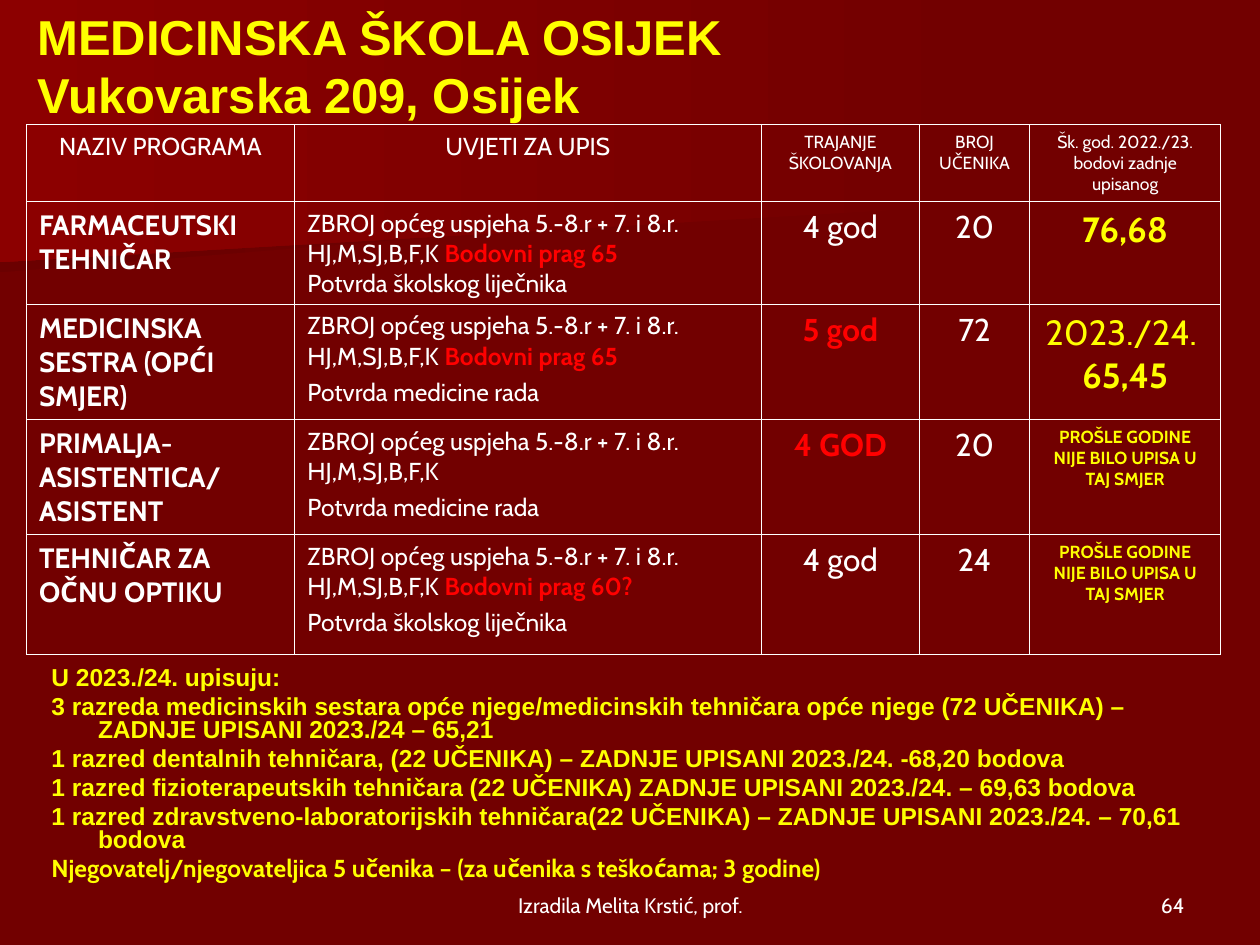
"""Build the enrolment slide of a medical school."""
from dataclasses import dataclass

from lxml.etree import SubElement as Sub
from pptx import Presentation
from pptx.dml.color import RGBColor as Rgb
from pptx.enum.text import MSO_ANCHOR as Anchor, PP_ALIGN as Align
from pptx.oxml.ns import qn
from pptx.util import Inches, Pt

HEX = {"back": "720000", "dark": "6B0000", "glow": "8C0000",
       "white": "FFFFFF", "yellow": "FFFF00", "red": "FF0000"}


@dataclass
class Run:
    text: str
    size: float = 14
    color: str = "white"
    bold: bool = False
    font: str = "Cabin"


@dataclass
class Para:
    runs: list[Run]
    align: Align = Align.LEFT
    before: float = 0
    space: float = 1.0
    hang: bool = False


@dataclass
class Box:
    left: float
    top: float
    width: float
    height: float
    anchor: Anchor
    paras: list[Para]


@dataclass
class Facet:
    points: list[tuple[float, float]]
    color: str


def tint(name: str) -> Rgb:
    """Return the named colour."""
    return Rgb.from_string(HEX[name])


def write(frame, paras: list[Para]) -> None:
    """Fill a text frame with formatted paragraphs."""
    for i, para in enumerate(paras):
        line = frame.add_paragraph() if i else frame.paragraphs[0]
        line.alignment = para.align
        line.space_before = Pt(para.before)
        line.line_spacing = para.space
        if para.hang:
            props = line._p.get_or_add_pPr()
            props.set("marL", str(Inches(0.38)))
            props.set("indent", str(Inches(-0.37)))
        for part in para.runs:
            run = line.add_run()
            run.text = part.text
            run.font.name = part.font
            run.font.size = Pt(part.size)
            run.font.bold = part.bold
            run.font.color.rgb = tint(part.color)


def add_box(slide, box: Box) -> None:
    """Add a wrapped text box."""
    shape = slide.shapes.add_textbox(*map(
        Inches, (box.left, box.top, box.width, box.height)))
    frame = shape.text_frame
    frame.word_wrap = True
    frame.vertical_anchor = box.anchor
    write(frame, box.paras)


def add_facet(slide, facet: Facet) -> None:
    """Add a background polygon that fades from right to left."""
    points = [(Inches(x), Inches(y)) for x, y in facet.points]
    path = slide.shapes.build_freeform(*points[0])
    path.add_line_segments(points[1:], close=True)
    shape = path.convert_to_shape()
    shape.shadow.inherit = False
    shape.line.fill.background()
    shape.fill.gradient()
    shape.fill.gradient_angle = 180
    for stop, name in zip(shape.fill.gradient_stops, ("back", facet.color)):
        stop.color.rgb = tint(name)


def edge(cell) -> None:
    """Draw thin white borders around a cell."""
    props = cell._tc.get_or_add_tcPr()
    for i, side in enumerate(("lnL", "lnR", "lnT", "lnB")):
        line = props.makeelement(qn(f"a:{side}"), {"w": str(Pt(0.45))})
        fill = Sub(line, qn("a:solidFill"))
        Sub(fill, qn("a:srgbClr"), val=HEX["white"])
        props.insert(i, line)


def add_grid(slide, rows: list[list[list[Para]]]) -> None:
    """Add the table of programmes."""
    wide = (2.13, 3.7, 1.26, 0.87, 1.52)
    high = (0.61, 0.8, 0.9, 0.91, 0.95)
    shape = slide.shapes.add_table(
        len(high), len(wide), Inches(0.21), Inches(0.99),
        Inches(sum(wide)), Inches(sum(high)))
    table = shape.table
    table.first_row = table.horz_banding = False
    for col, width in zip(table.columns, wide):
        col.width = Inches(width)
    for row, height, cells in zip(table.rows, high, rows):
        row.height = Inches(height)
        for cell, paras in zip(row.cells, cells):
            cell.fill.background()
            edge(cell)
            write(cell.text_frame, paras)


def mid(text: str, size: float, color: str = "white", bold: bool = False,
        before: float = 0) -> Para:
    """Return a centred paragraph."""
    return Para([Run(text, size, color, bold)], Align.CENTER, before, 1.01)


def terms(limit: str, proof: str, gap: float = 3.5) -> list[Para]:
    """Return the entry terms of one programme."""
    base = "ZBROJ općeg uspjeha 5.-8.r + 7. i 8.r. HJ,M,SJ,B,F,K"
    runs = [Run(base)]
    if limit:
        runs = [Run(base + " "), Run(f"Bodovni prag {limit}", 14, "red", True)]
    return [Para(runs, before=3.5, space=1.01),
            Para([Run(f"Potvrda {proof}")], before=gap, space=1.01)]


def course(name: str, needs: list[Para], years: Para, seats: str,
           score: list[Para]) -> list[list[Para]]:
    """Return the cells of one programme."""
    title = Para([Run(name, 16, bold=True)], space=1.01)
    return [[title], needs, [years], [mid(seats, 18)], score]


def note(text: str, font: str = "Arial") -> Para:
    """Return a hanging yellow paragraph."""
    return Para([Run(text, 14, "yellow", True, font)], Align.LEFT, 3, 0.8, True)


def main() -> None:
    """Build and save the slide."""
    deck = Presentation()
    deck.slide_width, deck.slide_height = Inches(10), Inches(7.5)
    slide = deck.slides.add_slide(deck.slide_layouts[6])
    slide.background.fill.solid()
    slide.background.fill.fore_color.rgb = tint("back")

    add_facet(slide, Facet([(7.78, 1.53), (0, 2.16), (0, 1.01), (7.79, 1.01),
                            (7.78, 1.28)], "dark"))
    add_facet(slide, Facet([(7.91, 1.62), (0, 2.08), (0, 0), (7.92, 0)], "glow"))

    heads = (("NAZIV PROGRAMA", 14), ("UVJETI ZA UPIS", 14),
             ("TRAJANJE ŠKOLOVANJA", 10), ("BROJ UČENIKA", 10),
             ("Šk. god. 2022./23. bodovi zadnje upisanog", 10))
    four = mid("4 god", 18)
    none = [mid("PROŠLE GODINE NIJE BILO UPISA U TAJ SMJER", 10, "yellow", True, 4.5)]
    doctor, labour = "školskog liječnika", "medicine rada"
    add_grid(slide, [
        [[mid(text, size, before=size / 4)] for text, size in heads],
        course("FARMACEUTSKI TEHNIČAR", terms("65", doctor, 0), four, "20",
               [mid("76,68", 20, "yellow", True)]),
        course("MEDICINSKA SESTRA (OPĆI SMJER)", terms("65", labour),
               mid("5 god", 18, "red", True), "72",
               [mid("2023./24. ", 20, "yellow"), mid("65,45", 20, "yellow", True)]),
        course("PRIMALJA-ASISTENTICA/ASISTENT", terms("", labour),
               mid("4 GOD", 18, "red", True), "20", none),
        course("TEHNIČAR ZA OČNU OPTIKU", terms("60?", doctor), four, "24", none)])

    titles = ("MEDICINSKA ŠKOLA OSIJEK", "Vukovarska 209, Osijek")
    notes = (
        "U 2023./24. upisuju:",
        "3 razreda medicinskih sestara opće njege/medicinskih tehničara opće njege "
        "(72 UČENIKA) – ZADNJE UPISANI 2023./24 – 65,21",
        "1 razred dentalnih tehničara, (22 UČENIKA) – ZADNJE UPISANI 2023./24. "
        "-68,20 bodova",
        "1 razred fizioterapeutskih tehničara (22 UČENIKA) ZADNJE UPISANI 2023./24. "
        "– 69,63 bodova",
        "1 razred zdravstveno-laboratorijskih tehničara(22 UČENIKA) – ZADNJE UPISANI "
        "2023./24. – 70,61 bodova")
    last = "Njegovatelj/njegovateljica 5 učenika – (za učenika s teškoćama; 3 godine)"
    for box in (
        Box(0.2, 0.03, 9, 0.97, Anchor.MIDDLE,
            [Para([Run(text, 28, "yellow", True, "Arial")]) for text in titles]),
        Box(0.3, 5.25, 9.53, 1.81, Anchor.TOP,
            [*map(note, notes), note(last, "Cabin")]),
        Box(3.42, 6.83, 3.17, 0.5, Anchor.BOTTOM,
            [Para([Run("Izradila Melita Krstić, prof.", 12)], Align.CENTER)]),
        Box(7.17, 6.83, 2.33, 0.5, Anchor.BOTTOM,
            [Para([Run("64", 12)], Align.RIGHT)]),
    ):
        add_box(slide, box)
    deck.save("out.pptx")


if __name__ == "__main__":
    main()
